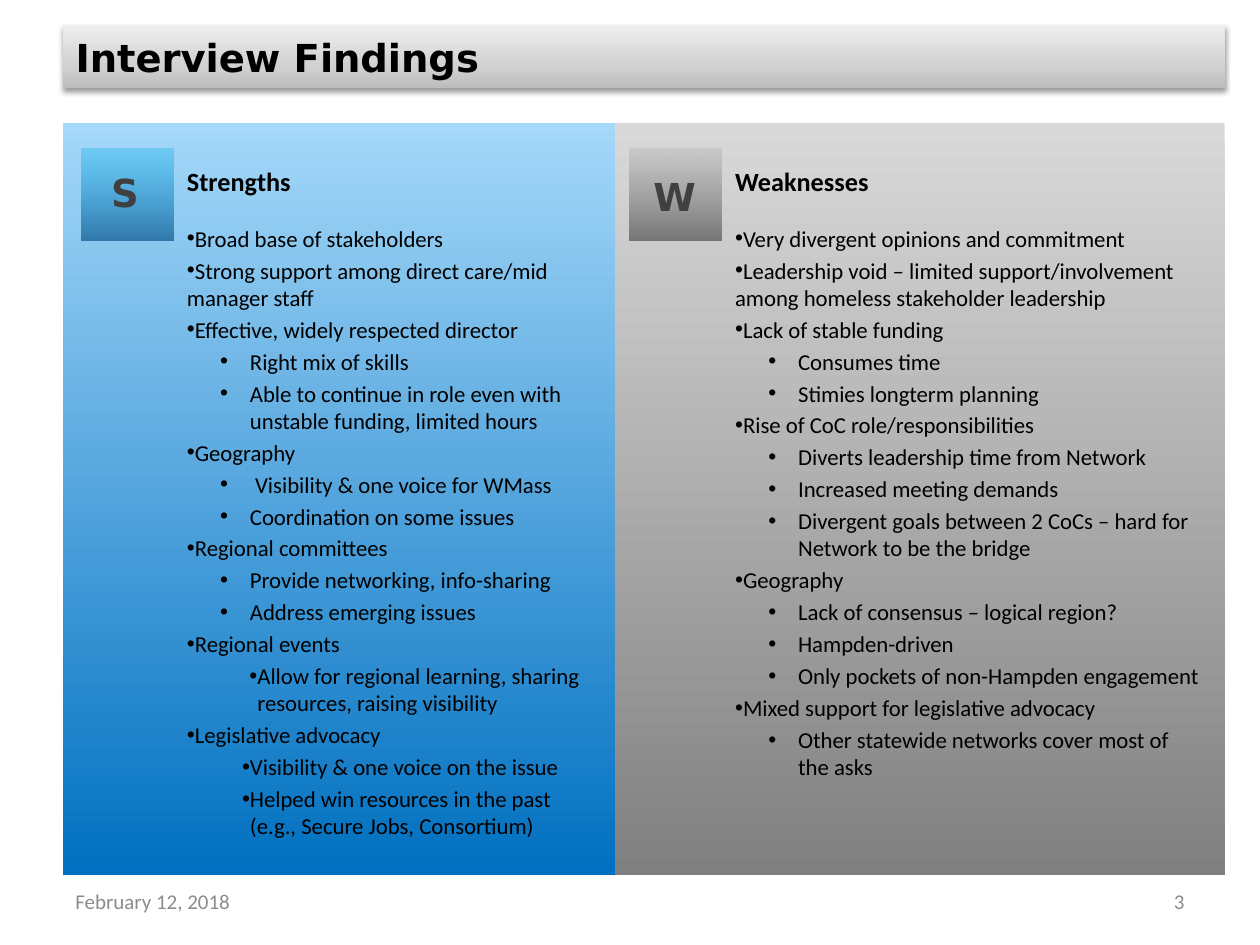
from lxml import etree
from pptx import Presentation
from pptx.dml.color import RGBColor
from pptx.enum import shapes, text
from pptx.oxml import ns
from pptx.util import Cm, Pt

COLORS = {"ink": "000000", "letter": "404040", "footer": "8C8C8C"}

# Gradient stops from top to bottom: position, colour, opacity (all percent)
GRADIENTS = {
    "title": [(0, "EEEEEE", 100), (65, "D1D1D1", 100), (100, "BDBDBD", 100)],
    "blue panel": [(0, "A5D8F9", 100), (100, "0070C0", 100)],
    "gray panel": [(0, "D9D9D9", 100), (100, "808080", 100)],
    "blue tile": [(0, "00B0F0", 30), (100, "004C84", 65)],
    "gray tile": [(0, "BFBFBF", 58), (100, "595959", 74)],
}

FORMATS = {
    "title": {"name": "DejaVu Sans", "size": Pt(22), "bold": True, "color": "ink"},
    "letter": {"name": "DejaVu Sans", "size": Pt(22), "bold": True, "color": "letter"},
    "heading": {"name": "Calibri", "size": Pt(15), "bold": True, "color": "ink"},
    "item": {"name": "Calibri", "size": Pt(13), "bold": False, "color": "ink"},
    "footer": {"name": "Calibri", "size": Pt(12), "bold": False, "color": "footer"},
}

# Bullet styles: left margin and first-line indent in cm
INDENTS = {"main": (0, 0), "sub": (1.27, -0.6), "tight": (1.27, -0.16), "deep": (1.42, -0.16)}

STRENGTHS = [
    ("main", "Broad base of stakeholders"),
    ("main", "Strong support among direct care/mid manager staff"),
    ("main", "Effective, widely respected director"),
    ("sub", "Right mix of skills"),
    ("sub", "Able to continue in role even with unstable funding, limited hours"),
    ("main", "Geography"),
    ("sub", " Visibility & one voice for WMass"),
    ("sub", "Coordination on some issues"),
    ("main", "Regional committees"),
    ("sub", "Provide networking, info-sharing"),
    ("sub", "Address emerging issues"),
    ("main", "Regional events"),
    ("deep", "Allow for regional learning, sharing resources, raising visibility"),
    ("main", "Legislative advocacy"),
    ("tight", "Visibility & one voice on the issue"),
    ("tight", "Helped win resources in the past (e.g., Secure Jobs, Consortium)"),
]

WEAKNESSES = [
    ("main", "Very divergent opinions and commitment"),
    ("main", "Leadership void – limited support/involvement among homeless stakeholder leadership"),
    ("main", "Lack of stable funding"),
    ("sub", "Consumes time"),
    ("sub", "Stimies longterm planning"),
    ("main", "Rise of CoC role/responsibilities"),
    ("sub", "Diverts leadership time from Network"),
    ("sub", "Increased meeting demands"),
    ("sub", "Divergent goals between 2 CoCs – hard for Network to be the bridge"),
    ("main", "Geography"),
    ("sub", "Lack of consensus – logical region?"),
    ("sub", "Hampden-driven"),
    ("sub", "Only pockets of non-Hampden engagement"),
    ("main", "Mixed support for legislative advocacy"),
    ("sub", "Other statewide networks cover most of the asks"),
]


def add_element(parent, tag, **attributes):
    return etree.SubElement(parent, ns.qn(tag), attributes)


def write(paragraph, words, style):
    run = paragraph.add_run()
    run.text = words
    for key, value in FORMATS[style].items():
        if key == "color":
            run.font.color.rgb = RGBColor.from_string(COLORS[value])
        else:
            setattr(run.font, key, value)


def fill_gradient(shape, name):
    shape.fill.gradient()
    shape.fill.gradient_angle = 270
    stops = shape.element.spPr.find(".//" + ns.qn("a:gsLst"))
    for stop in list(stops):
        stops.remove(stop)
    for position, color, opacity in GRADIENTS[name]:
        stop = add_element(stops, "a:gs", pos=str(position * 1000))
        rgb = add_element(stop, "a:srgbClr", val=color)
        if opacity < 100:
            add_element(rgb, "a:alpha", val=str(opacity * 1000))


def add_rectangle(parent, box, gradient):
    shape = parent.shapes.add_shape(shapes.MSO_SHAPE.RECTANGLE, *map(Cm, box))
    shape.shadow.inherit = False
    shape.line.fill.background()
    fill_gradient(shape, gradient)


def add_text(parent, box, words, style, **alignment):
    frame = parent.shapes.add_textbox(*map(Cm, box)).text_frame
    frame.word_wrap = True
    frame.vertical_anchor = alignment.get("anchor", text.MSO_ANCHOR.TOP)
    frame.paragraphs[0].alignment = alignment.get("align", text.PP_ALIGN.LEFT)
    write(frame.paragraphs[0], words, style)
    return frame


def add_bullet(frame, words, indent, space_before):
    paragraph = frame.add_paragraph()
    paragraph.space_before = Pt(space_before)
    left, first = INDENTS[indent]
    properties = paragraph._p.get_or_add_pPr()
    properties.set("marL", str(Cm(left)))
    properties.set("indent", str(Cm(first)))
    add_element(properties, "a:buFont", typeface="Arial")
    add_element(properties, "a:buChar", char="•")
    write(paragraph, words, "item")


def place_title(slide, box, words):
    title = slide.shapes.title
    title.left, title.top, title.width, title.height = map(Cm, box)
    fill_gradient(title, "title")
    # Soft shadow below the bar
    effects = add_element(title.element.spPr, "a:effectLst")
    shadow = add_element(effects, "a:outerShdw", blurRad=str(Pt(3.1)), dist=str(Pt(1.6)),
                         dir="5400000", rotWithShape="0")
    add_element(add_element(shadow, "a:srgbClr", val="000000"), "a:alpha", val="38000")
    frame = title.text_frame
    frame.auto_size = text.MSO_AUTO_SIZE.NONE
    frame.vertical_anchor = text.MSO_ANCHOR.MIDDLE
    frame.paragraphs[0].alignment = text.PP_ALIGN.LEFT
    write(frame.paragraphs[0], words, "title")


def add_panel(slide, box, color, inset, letter, letter_box, heading, items, text_size):
    left, top, width, height = box
    add_rectangle(slide, box, color + " panel")

    # Heading and bullets, with a wider gap after the heading
    frame = add_text(slide, (left + inset + 1.87, top + 0.72, *text_size), heading, "heading")
    for number, (indent, words) in enumerate(items):
        add_bullet(frame, words, indent, 2.6 if number else 16)

    # Letter tile
    tile_left, tile_top, side = left + inset, top + 0.52, 1.85
    group = slide.shapes.add_group_shape()
    add_rectangle(group, (tile_left, tile_top, side, side), color + " tile")
    dx, dy, letter_width, letter_height = letter_box
    add_text(group, (tile_left + dx, tile_top + dy, letter_width, letter_height),
             letter, "letter", align=text.PP_ALIGN.CENTER)


def add_footer(slide, box, date, number):
    left, top, width, height = box
    field = 5.92
    middle = text.MSO_ANCHOR.MIDDLE
    add_text(slide, (left, top, field, height), date, "footer", anchor=middle)
    add_text(slide, (left + width - field, top, field, height), number, "footer",
             anchor=middle, align=text.PP_ALIGN.RIGHT)


def main():
    presentation = Presentation()
    presentation.slide_width, presentation.slide_height = Cm(25.4), Cm(19.05)
    slide = presentation.slides.add_slide(presentation.slide_layouts[5])
    place_title(slide, (1.27, 0.51, 23.42, 1.27), "Interview Findings")
    add_panel(slide, (1.27, 2.48, 11.13, 15.17), "blue", 0.38, "S", (0.25, 0.28, 1.24, 1.19),
              "Strengths", STRENGTHS, (8.86, 15.57))
    add_panel(slide, (12.4, 2.48, 12.29, 15.17), "gray", 0.3, "W", (0.15, 0.36, 1.5, 1.19),
              "Weaknesses", WEAKNESSES, (9.91, 13.69))
    add_footer(slide, (1.27, 17.65, 22.86, 1.02), "February 12, 2018", "3")
    presentation.save("out.pptx")


if __name__ == "__main__":
    main()
